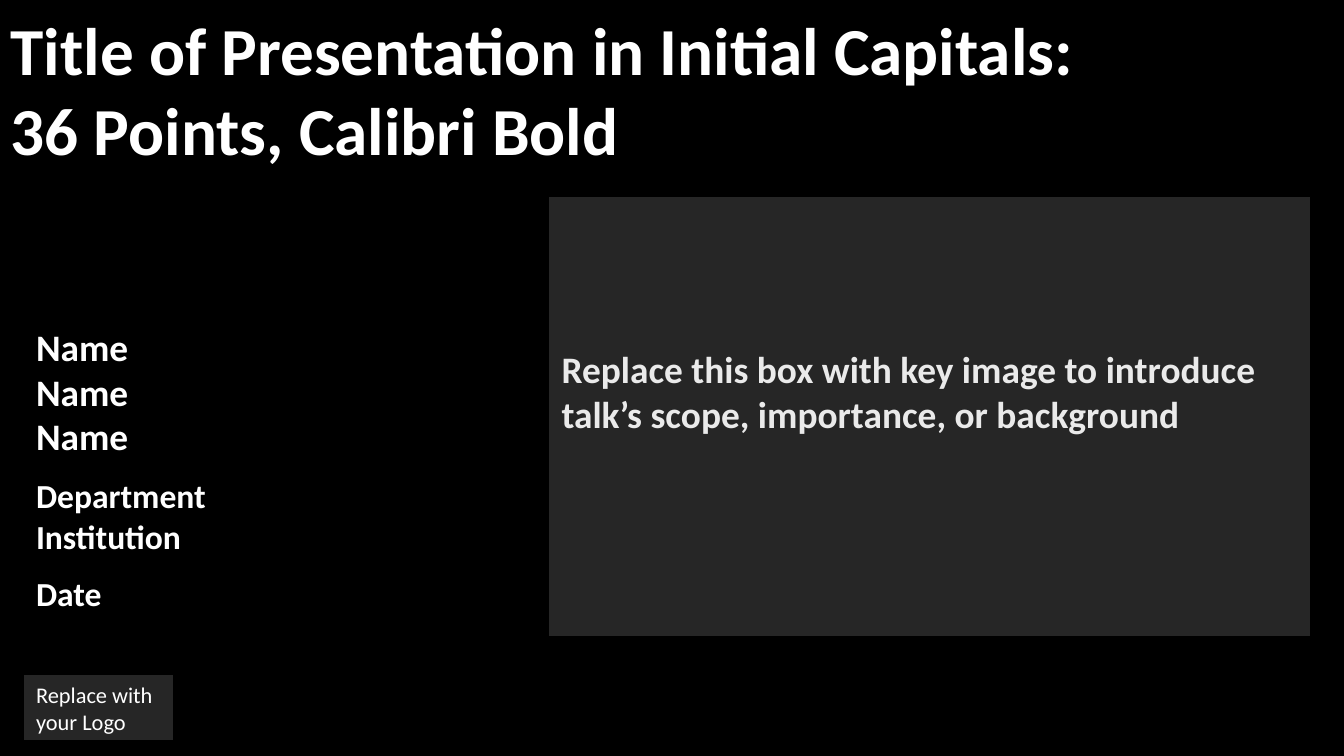
import pptx
import pptx.dml.color
import pptx.enum.shapes
import pptx.enum.text
import pptx.util
from dataclasses import dataclass

Inches = pptx.util.Inches
Pt = pptx.util.Pt
Anchor = pptx.enum.text.MSO_ANCHOR


@dataclass(frozen=True)
class Theme:
    font: str = "Calibri"
    background: str = "000000"
    panel: str = "262626"
    text: str = "FFFFFF"
    muted: str = "EAEAEA"
    title_size: int = 36
    large_size: int = 20
    medium_size: int = 18
    small_size: int = 12
    group_gap: int = 9
    outline: float = 0.75


THEME = Theme()

# Each paragraph: text, type size, space before
TITLE = [
    ("Title of Presentation in Initial Capitals:", THEME.title_size, 0),
    ("36 Points, Calibri Bold", THEME.title_size, 0),
]
AUTHORS = [
    ("Name", THEME.large_size, 0),
    ("Name", THEME.large_size, 0),
    ("Name", THEME.large_size, 0),
    ("Department", THEME.medium_size, THEME.group_gap),
    ("Institution", THEME.medium_size, 0),
    ("Date", THEME.medium_size, THEME.group_gap),
]
KEY_IMAGE = [
    ("Replace this box with key image to introduce "
     "talk’s scope, importance, or background", THEME.large_size, 0),
]
LOGO = [
    ("Replace with", THEME.small_size, 0),
    ("your Logo", THEME.small_size, 0),
]


def rgb(value):
    return pptx.dml.color.RGBColor.from_string(value)


def write(box, paragraphs, insets, color=THEME.text, bold=True, anchor=Anchor.TOP):
    """Fill a box with left-aligned paragraphs; insets run left, top, right, bottom."""
    frame = box.text_frame
    frame.word_wrap = True
    frame.vertical_anchor = anchor
    (frame.margin_left, frame.margin_top,
     frame.margin_right, frame.margin_bottom) = map(Inches, insets)
    frame.text = "\n".join(text for text, _, _ in paragraphs)
    for para, (_, size, gap) in zip(frame.paragraphs, paragraphs):
        para.alignment = pptx.enum.text.PP_ALIGN.LEFT
        para.space_before = Pt(gap)
        for span in para.runs:
            span.font.name = THEME.font
            span.font.size = Pt(size)
            span.font.bold = bold
            span.font.color.rgb = rgb(color)


def add_text(page, place):
    return page.shapes.add_textbox(*map(Inches, place))


def add_panel(page, place):
    panel = page.shapes.add_shape(
        pptx.enum.shapes.MSO_SHAPE.RECTANGLE, *map(Inches, place))
    panel.shadow.inherit = False
    panel.fill.solid()
    panel.fill.fore_color.rgb = rgb(THEME.panel)
    panel.line.color.rgb = rgb(THEME.background)
    panel.line.width = Pt(THEME.outline)
    return panel


def main():
    deck = pptx.Presentation()
    deck.slide_width = Inches(10)
    deck.slide_height = deck.slide_width * 9 // 16
    page = deck.slides.add_slide(deck.slide_layouts[6])
    page.background.fill.solid()
    page.background.fill.fore_color.rgb = rgb(THEME.background)

    authors = add_text(page, (0.17, 2.38, 3.67, 1.71))
    write(authors, AUTHORS, (0.1, 0.03, 0.1, 0.03))

    # The deeper bottom inset lifts the text above the middle of the panel
    key_image = add_panel(page, (4.08, 1.46, 5.67, 3.28))
    write(key_image, KEY_IMAGE, (0.1, 0.05, 0.1, 0.43),
          color=THEME.muted, anchor=Anchor.MIDDLE)

    logo = add_panel(page, (0.17, 5.02, 1.12, 0.49))
    write(logo, LOGO, (0.1, 0.05, 0.1, 0.05), bold=False)

    title = add_text(page, (0.08, 0.06, 8.2, 1.21))
    write(title, TITLE, (0, 0, 0, 0))
    title.text_frame.auto_size = pptx.enum.text.MSO_AUTO_SIZE.SHAPE_TO_FIT_TEXT

    deck.save("out.pptx")


if __name__ == "__main__":
    main()
